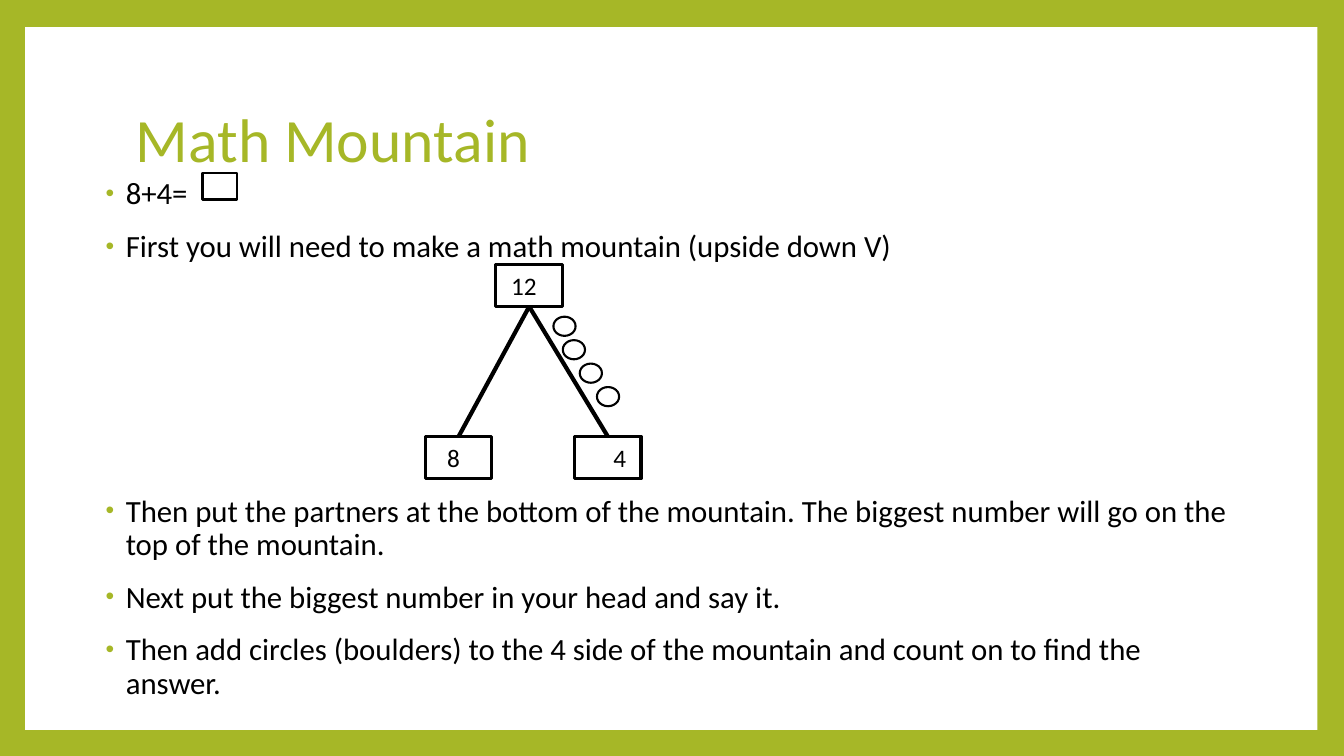
from dataclasses import dataclass

from lxml import etree
from pptx import Presentation
from pptx.dml.color import RGBColor
from pptx.enum.shapes import MSO_CONNECTOR, MSO_SHAPE
from pptx.enum.text import MSO_ANCHOR, PP_ALIGN
from pptx.oxml.ns import qn
from pptx.util import Pt

RECTANGLE = MSO_SHAPE.RECTANGLE
OVAL = MSO_SHAPE.OVAL
STRAIGHT = MSO_CONNECTOR.STRAIGHT
LEFT = PP_ALIGN.LEFT
TOP = MSO_ANCHOR.TOP
MIDDLE = MSO_ANCHOR.MIDDLE

GREEN = "A6B727"
WHITE = "FFFFFF"
BLACK = "000000"
FONT = "Calibri"
BOTTOM_SITE, TOP_SITE = 2, 0


@dataclass
class Box:
    left: float
    top: float
    width: float
    height: float


@dataclass
class NumberBox:
    label: str
    left: float
    top: float
    inset: float


@dataclass
class Bullet:
    text: str
    space_before: float = 14


SUM_BOX = NumberBox("12", 354.25, 188.75, 10.8)
PARTNERS = [
    NumberBox("8", 303.85, 311.75, 15.5),
    NumberBox("4", 410.4, 311.75, 27.8),
]
BOULDER_LEFTS = [395.3, 402, 414.1, 426.4]
BOULDER_TOP, BOULDER_STEP = 226.2, 16.75
BULLETS = [
    Bullet("8+4="),
    Bullet("First you will need to make a math mountain (upside down V)"),
    Bullet("Then put the partners at the bottom of the mountain. "
           "The biggest number will go on the top of the mountain.", 165),
    Bullet("Next put the biggest number in your head and say it."),
    Bullet("Then add circles (boulders) to the 4 side of the mountain "
           "and count on to find the answer."),
]


def color(value: str) -> RGBColor:
    return RGBColor.from_string(value)


def add_run(paragraph, text: str, size: float, font_color: str) -> None:
    run = paragraph.add_run()
    run.text = text
    run.font.name = FONT
    run.font.size = Pt(size)
    run.font.color.rgb = color(font_color)


def add_shape(slide, kind, box: Box, fill: str | None, line_width: float = 0):
    shape = slide.shapes.add_shape(
        kind, Pt(box.left), Pt(box.top), Pt(box.width), Pt(box.height))
    shape.shadow.inherit = False
    if fill:
        shape.fill.solid()
        shape.fill.fore_color.rgb = color(fill)
    else:
        shape.fill.background()
    if line_width:
        shape.line.color.rgb = color(BLACK)
        shape.line.width = Pt(line_width)
    else:
        shape.line.fill.background()
    return shape


def add_text_frame(slide, box: Box, anchor):
    text_box = slide.shapes.add_textbox(
        Pt(box.left), Pt(box.top), Pt(box.width), Pt(box.height))
    frame = text_box.text_frame
    frame.word_wrap = True
    frame.vertical_anchor = anchor
    return frame


def add_number_box(slide, number: NumberBox):
    shape = add_shape(
        slide, RECTANGLE, Box(number.left, number.top, 47.5, 30.25), WHITE, 2.25)
    frame = shape.text_frame
    frame.margin_left = Pt(number.inset)
    frame.margin_right = frame.margin_top = frame.margin_bottom = Pt(0)
    frame.vertical_anchor = MIDDLE
    paragraph = frame.paragraphs[0]
    paragraph.alignment = LEFT
    add_run(paragraph, number.label, 18, BLACK)
    return shape


def add_slope(slide, peak, foot) -> None:
    connector = slide.shapes.add_connector(STRAIGHT, Pt(0), Pt(0), Pt(0), Pt(0))
    connector.begin_connect(peak, BOTTOM_SITE)
    connector.end_connect(foot, TOP_SITE)
    connector.line.color.rgb = color(BLACK)
    connector.line.width = Pt(3)
    properties = connector._element.find(qn("p:spPr"))
    etree.SubElement(properties, qn("a:effectLst"))


def set_bullet(paragraph) -> None:
    properties = paragraph._p.get_or_add_pPr()
    properties.set("marL", str(Pt(18)))
    properties.set("indent", str(-Pt(14.4)))
    bullet_color = etree.SubElement(properties, qn("a:buClr"))
    etree.SubElement(bullet_color, qn("a:srgbClr"), val=GREEN)
    etree.SubElement(properties, qn("a:buSzPct"), val="80000")
    etree.SubElement(properties, qn("a:buFont"), typeface="Arial")
    etree.SubElement(properties, qn("a:buChar"), char="•")


def add_bullets(slide, box: Box, bullets: list[Bullet]) -> None:
    frame = add_text_frame(slide, box, TOP)
    for index, bullet in enumerate(bullets):
        paragraph = frame.add_paragraph() if index else frame.paragraphs[0]
        paragraph.line_spacing = 0.9
        paragraph.space_before = Pt(bullet.space_before)
        set_bullet(paragraph)
        add_run(paragraph, bullet.text, 22, BLACK)


def main() -> None:
    presentation = Presentation()
    presentation.slide_width = Pt(960)
    presentation.slide_height = Pt(540)
    slide = presentation.slides.add_slide(presentation.slide_layouts[6])
    slide.background.fill.solid()
    slide.background.fill.fore_color.rgb = color(GREEN)
    add_shape(slide, RECTANGLE, Box(18, 19.3, 923, 502), WHITE)

    title = add_text_frame(slide, Box(90, 48.25, 777.6, 106.5), MIDDLE).paragraphs[0]
    title.line_spacing = 0.9
    add_run(title, "Math Mountain", 44, GREEN)

    add_bullets(slide, Box(64.8, 123.85, 828, 416), BULLETS)
    add_shape(slide, RECTANGLE, Box(144.7, 123.85, 24.5, 18.7), WHITE, 1.5)

    peak = add_number_box(slide, SUM_BOX)
    for partner in PARTNERS:
        add_slope(slide, peak, add_number_box(slide, partner))
    for index, left in enumerate(BOULDER_LEFTS):
        top = BOULDER_TOP + index * BOULDER_STEP
        add_shape(slide, OVAL, Box(left, top, 15.85, 13.7), None, 1.5)

    presentation.save("out.pptx")


if __name__ == "__main__":
    main()
